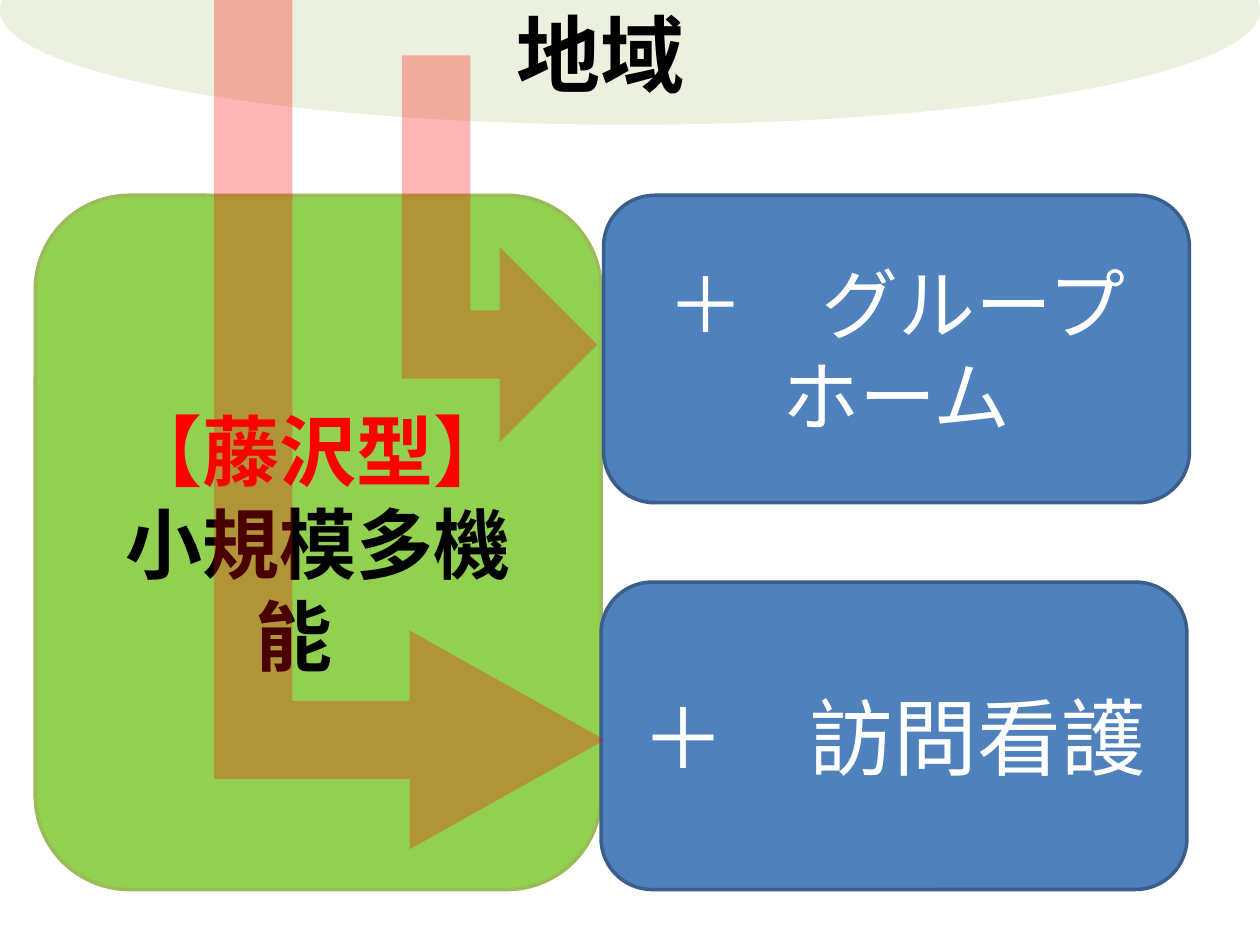
import pptx
import pptx.util
import pptx.dml.color
import pptx.enum.shapes
import pptx.enum.text
import pptx.oxml.ns
import lxml.etree

Inches = pptx.util.Inches
qn = pptx.oxml.ns.qn
SHAPE = pptx.enum.shapes.MSO_SHAPE
COLORS = {
    "green": "92D050", "green_line": "9BBB59",
    "blue": "4F81BD", "blue_line": "3A5F8C",
    "pale": "EBF1DE", "red": "FF0000",
    "black": "000000", "white": "FFFFFF",
}
SANS = "Noto Sans CJK JP"
MONO = "Noto Sans Mono"


def rgb(name):
    return pptx.dml.color.RGBColor.from_string(COLORS[name])


def add_run(p, text, color, face, **fmt):
    r = p.add_run()
    r.text = text
    r.font.color.rgb = rgb(color)
    for key, value in {"name": face, **fmt}.items():
        setattr(r.font, key, value)
    lxml.etree.SubElement(r.font._element, qn("a:ea"), typeface=face)


def write(tf, paragraphs, anchor):
    tf.word_wrap = True
    tf.vertical_anchor = anchor
    for i, runs in enumerate(paragraphs):
        p = tf.add_paragraph() if i else tf.paragraphs[0]
        p.alignment = pptx.enum.text.PP_ALIGN.CENTER
        for text, color, face, size, bold in runs:
            add_run(p, text, color, face, size=pptx.util.Pt(size), bold=bold)


def add_shape(s, kind, box, fill, line=None):
    sp = s.shapes.add_shape(kind, *map(Inches, box))
    sp.shadow.inherit = False
    sp.fill.solid()
    sp.fill.fore_color.rgb = rgb(fill)
    if line:
        sp.line.color.rgb = rgb(line)
        sp.line.width = pptx.util.Pt(2)
    else:
        sp.line.fill.background()
    return sp


def add_card(s, box, fill, paragraphs):
    sp = add_shape(s, SHAPE.ROUNDED_RECTANGLE, box, fill, fill + "_line")
    write(sp.text_frame, paragraphs, pptx.enum.text.MSO_ANCHOR.MIDDLE)


def add_region(s, box):
    left, top, width, height = box
    add_shape(s, SHAPE.OVAL, box, "pale")
    label = (left + 3.19, top + 0.79, 3.15, 0.91)
    tb = s.shapes.add_textbox(*map(Inches, label))
    write(tb.text_frame, [[("地域", "black", SANS, 48, True)]],
          pptx.enum.text.MSO_ANCHOR.TOP)


def add_arrow(s, box, adjustments):
    left, top, width, height = box
    frame = (left + (width - height) / 2, top + (height - width) / 2, height, width)
    sp = add_shape(s, SHAPE.BENT_UP_ARROW, frame, "red")
    sp.rotation = 90
    for i, value in enumerate(adjustments):
        sp.adjustments[i] = value
    color = sp._element.spPr.find(qn("a:solidFill")).find(qn("a:srgbClr"))
    lxml.etree.SubElement(color, qn("a:alpha"), val="29000")


def main():
    prs = pptx.Presentation()
    prs.slide_width, prs.slide_height = Inches(10), Inches(7.5)
    s = prs.slides.add_slide(prs.slide_layouts[6])
    add_card(s, (0.28, 1.55, 4.49, 5.51), "green", [
        [("【藤沢型】", "red", SANS, 44, True)],
        [("小規模多機能", "black", SANS, 44, True),
         ("　", "black", SANS, 28, False)],
    ])
    add_card(s, (4.77, 4.62, 4.65, 2.44), "blue", [
        [("＋　訪問看護", "white", MONO, 48, False)],
    ])
    add_card(s, (4.79, 1.55, 4.65, 2.44), "blue", [
        [(text, "white", MONO, 44, False)] for text in ("＋　グループ", "ホーム")
    ])
    add_region(s, (0, -0.82, 10, 1.81))
    add_arrow(s, (3.19, 0.44, 1.55, 3.07), (0.35, 0.5, 0.5))
    add_arrow(s, (1.7, -0.01, 3.1, 6.75), (0.2, 0.28, 0.5))
    prs.save("out.pptx")


if __name__ == "__main__":
    main()
